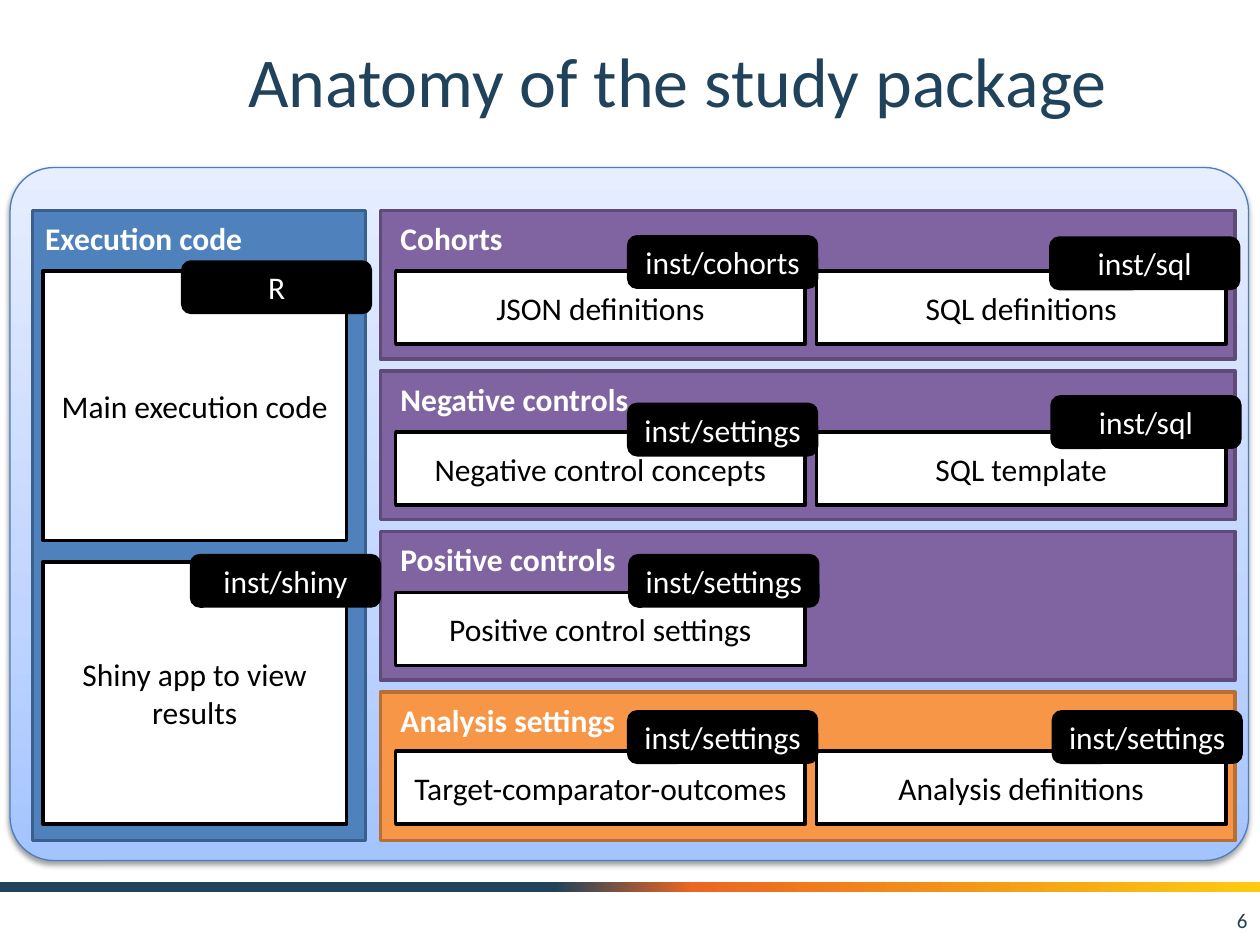
"""Build the slide on the anatomy of the study package."""
from lxml import etree
from pptx import Presentation
from pptx import util as u
from pptx.dml.color import RGBColor
from pptx.enum import shapes, text
from pptx.oxml import parse_xml
from pptx.oxml.ns import nsdecls, qn

COLORS = {
    "navy": "20425A", "ember": "EB6622", "gold": "FCCB10",
    "sky": "A4C4FF", "mist": "BFD4FF", "ice": "E6EEFF", "rim": "4B7EBC",
    "blue": "4F81BD", "blue edge": "3A5F8C",
    "purple": "8064A2", "purple edge": "5F4A78",
    "orange": "F79646", "orange edge": "B76F34",
    "white": "FFFFFF", "black": "000000",
}
RECT = shapes.MSO_SHAPE.RECTANGLE
ROUND = shapes.MSO_SHAPE.ROUNDED_RECTANGLE

prs = Presentation()
prs.slide_width, prs.slide_height = u.Inches(10), u.Inches(7.5)
column, row = prs.slide_width / 100, prs.slide_height / 75
slide = prs.slides.add_slide(prs.slide_layouts[5])


def write(shape, words, size=18, color="black", bold=False, align="CENTER",
          anchor="MIDDLE", wrap=True):
    frame = shape.text_frame
    frame.text = words
    frame.word_wrap = wrap
    frame.vertical_anchor = text.MSO_ANCHOR[anchor]
    paragraph = frame.paragraphs[0]
    paragraph.alignment = text.PP_ALIGN[align]
    font = paragraph.runs[0].font
    font.name, font.size, font.bold = "Calibri", u.Pt(size), bold
    font.color.rgb = RGBColor.from_string(COLORS[color])


def place(grid, kind=None, fill="white", edge="black", weight=2):
    left, top, width, height = grid
    spot = [round(n) for n in (left * column, top * row, width * column, height * row)]
    if kind is None:
        return slide.shapes.add_textbox(*spot)
    shape = slide.shapes.add_shape(kind, *spot)
    shape.shadow.inherit = False
    shape.fill.solid()
    shape.fill.fore_color.rgb = RGBColor.from_string(COLORS[fill])
    if edge:
        shape.line.color.rgb = RGBColor.from_string(COLORS[edge])
        shape.line.width = u.Pt(weight)
    else:
        shape.line.fill.background()
    return shape


stripe = place((0, 70, 100, 0.8), RECT, edge=None)
title = slide.shapes.title
title.left, title.top = round(12.5 * column), round(1.7 * row)
title.width, title.height = round(82.5 * column), round(9.2 * row)
write(title, "Anatomy of the study package", size=40, color="navy")

package = place((0.8, 13.3, 98.3, 55), ROUND, edge="rim", weight=0.75)
package.adjustments[0] = 0.063
blends = [
    (stripe, 0, [(44, "navy"), (55, "ember"), (100, "gold")]),
    (package, 270, [(0, "sky"), (35, "mist"), (100, "ice")]),
]
for shape, angle, stops in blends:
    blend = parse_xml(f'<a:gradFill {nsdecls("a")} rotWithShape="1"><a:gsLst/>'
                      f'<a:lin ang="{angle * 60000}" scaled="0"/></a:gradFill>')
    for share, color in stops:
        stop = etree.SubElement(blend[0], qn("a:gs"), pos=str(share * 1000))
        etree.SubElement(stop, qn("a:srgbClr"), val=COLORS[color])
    solid = shape._element.spPr.find(qn("a:solidFill"))
    solid.getparent().replace(solid, blend)

effects = package._element.spPr.find(qn("a:effectLst"))
effects.append(parse_xml(
    f'<a:outerShdw {nsdecls("a")} blurRad="{u.Pt(3.1)}" dist="{u.Pt(1.6)}" dir="5400000" '
    f'rotWithShape="0"><a:srgbClr val="{COLORS["black"]}"><a:alpha val="38000"/>'
    '</a:srgbClr></a:outerShdw>'))

first_top, panel_step, panel_height = 16.7, 12.74, 11.8
cell_lefts, cell_width, cell_height = (31.4, 64.8), 32.5, 5.8
tag_width, tag_height = 14.9, 4
inputs = [
    ("Cohorts", 10.2, "purple", 4.8,
     [("JSON definitions", "inst/cohorts", 49.9, 18.8),
      ("SQL definitions", "inst/sql", 83.4, 18.9)]),
    ("Negative controls", 20.2, "purple", 4.85,
     [("Negative control concepts", "inst/settings", 49.9, 32.1),
      ("SQL template", "inst/sql", 83.5, 31.5)]),
    ("Positive controls", 19.8, "purple", 4.85,
     [("Positive control settings", "inst/settings", 50, 44.1)]),
    ("Analysis settings", 19.2, "orange", 4.7,
     [("Target-comparator-outcomes", "inst/settings", 49.9, 56.5),
      ("Analysis definitions", "inst/settings", 83.6, 56.5)]),
]
panels, tags = [], []
for index, (heading, width, color, drop, parts) in enumerate(inputs):
    top = first_top + index * panel_step
    cells = []
    for left, (part, folder, tag_left, tag_top) in zip(cell_lefts, parts):
        cells.append((part, (left, top + drop, cell_width, cell_height)))
        tags.append((folder, tag_left, tag_top))
    panels.append((heading, color, (30.2, top, 67.8, panel_height), (30.8, width), cells))

panels.append(("Execution code", "blue", (2.6, first_top, 26.4, 50), (2.6, 17.8),
               [("Main execution code", (3.4, 21.5, 24.1, 21.4)),
                ("Shiny app to view results", (3.4, 44.6, 24.1, 20.8))]))
tags += [("R", 14.5, 20.8), ("inst/shiny", 15.2, 44.1)]

for heading, color, grid, (left, width), cells in panels:
    place(grid, RECT, color, f"{color} edge")
    for part, cell in cells:
        write(place(cell, RECT), part)
    write(place((left, grid[1] + 0.2, width, 4)), heading, color="white",
          bold=True, align="LEFT", anchor="TOP", wrap=False)

for folder, left, top in tags:
    write(place((left, top, tag_width, tag_height), ROUND, "black"), folder, color="white")

write(place((76.7, 71, 23.3, 4)), "6", size=12, color="navy", align="RIGHT")

prs.save("out.pptx")
